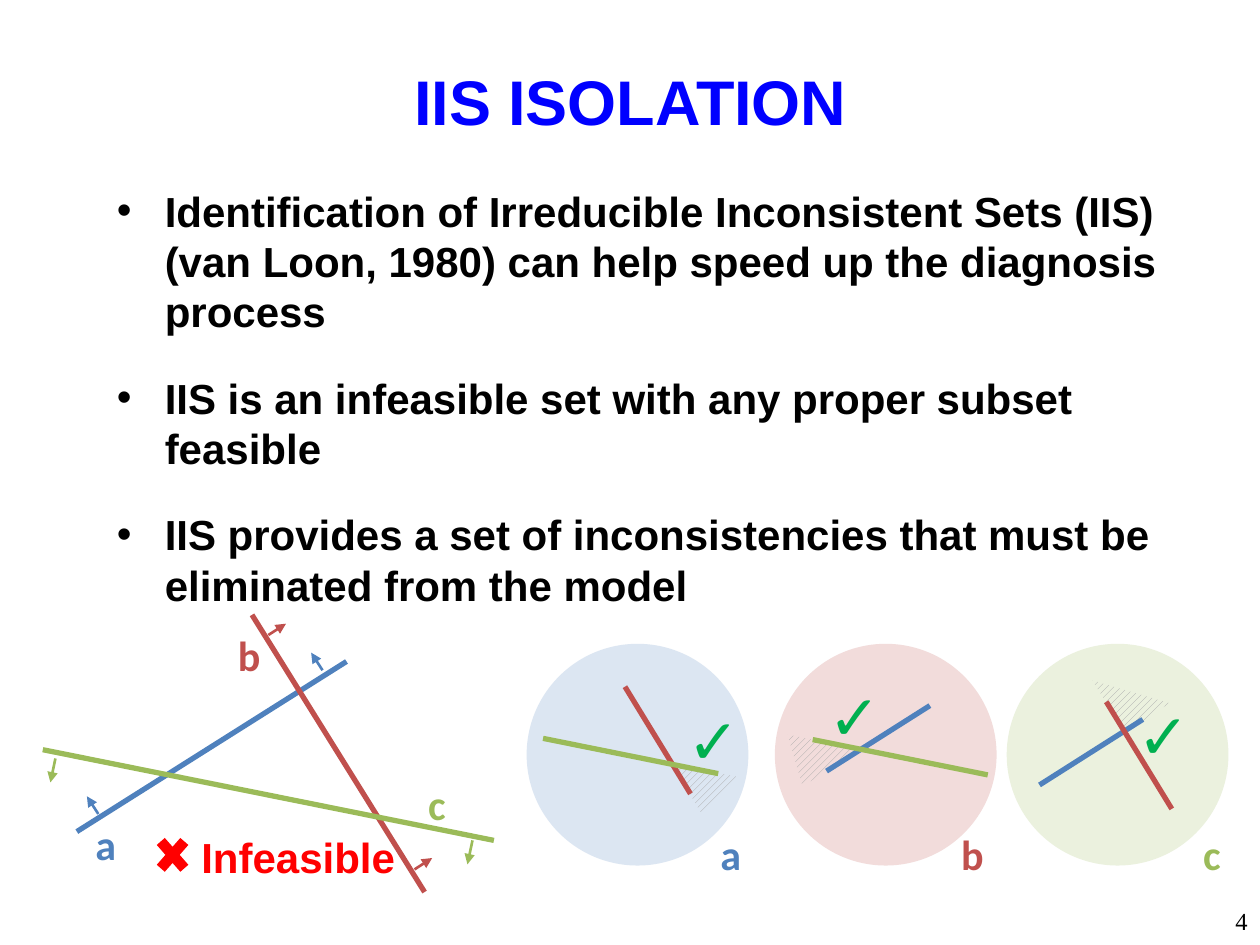
from dataclasses import dataclass
from lxml.etree import SubElement
from pptx import Presentation
from pptx.dml.color import RGBColor
from pptx.enum.dml import MSO_PATTERN
from pptx.enum.shapes import MSO_CONNECTOR, MSO_SHAPE as SHP
from pptx.enum.text import MSO_ANCHOR as ANC, PP_ALIGN as AL
from pptx.oxml.ns import qn
from pptx.util import Pt

PX = 9144


@dataclass(frozen=True)
class Theme:
    """Colours, fonts and sizes of the slide."""
    title = {"size": 36, "name": "Arial", "color": "0000FF", "bold": True}
    body = {"size": 24, "name": "Arial", "color": "000000", "bold": True}
    verdict = {"size": 24, "name": "Arial", "color": "FF0000", "bold": True}
    check = {"size": 36, "name": "Arial", "color": "00B050"}
    number = {"size": 14, "name": "Times New Roman", "color": "000000"}
    label = {"size": 24, "name": "Calibri", "bold": True}
    lines = {"a": "4F81BD", "b": "C0504D", "c": "9BBB59"}
    tints = {"a": "DCE6F2", "b": "F2DCDB", "c": "EBF1DE"}
    hatch = "A6A6A6"
    thick, thin = 3, 1.5


T = Theme()
BULLETS = [
    "Identification of Irreducible Inconsistent Sets (IIS) (van Loon, 1980) can help speed up the diagnosis process",
    "IIS is an infeasible set with any proper subset feasible",
    "IIS provides a set of inconsistencies that must be eliminated from the model",
]
CONSTRAINTS = {
    "a": {"ends": ((27, 172), (241, 37)), "feet": ((222, 44), (44, 158)),
          "side": (-9, -14), "label": (32, 157)},
    "b": {"ends": ((166, 0), (303, 220)), "feet": ((179, 16), (295, 202)),
          "side": (14, -9), "label": (145, 7)},
    "c": {"ends": ((0, 107), (358, 179)), "feet": ((10, 114), (341, 179)),
          "side": (-4, 19), "label": (296, 125)},
}
SHORT = {"a": (82, -52), "b": (52, 85), "c": (139, 28)}
SUBSETS = {
    "a": {"x": 418, "region": ((115, 95), (139, 135), (170, 106)),
          "starts": {"b": (78, 34), "c": (13, 75)}, "check": (118, 41), "label": (144, 142)},
    "b": {"x": 615, "region": ((69, 84), (10, 72), (22, 113)),
          "starts": {"a": (41, 101), "c": (30, 76)}, "check": (33, 22), "label": (138, 142)},
    "c": {"x": 799, "region": ((94, 71), (129, 47), (68, 29)),
          "starts": {"a": (26, 112), "b": (79, 46)}, "check": (94, 37), "label": (146, 142)},
}


def rgb(color):
    """Turn a hex string into a colour."""
    return RGBColor.from_string(color)


def emu(*lengths):
    """Turn px into EMU."""
    return [v * PX for v in lengths]


def shift(origin, offset):
    """Add an offset to a point."""
    return origin[0] + offset[0], origin[1] + offset[1]


def add_text(shapes, box, paragraphs, style, wrap=True, anchor=ANC.TOP, **para):
    """Add a text box with one style and return its paragraphs."""
    tf = shapes.add_textbox(*emu(*box)).text_frame
    tf.word_wrap, tf.vertical_anchor = wrap, anchor
    for i, text in enumerate(paragraphs):
        p = tf.add_paragraph() if i else tf.paragraphs[0]
        for key, value in para.items():
            setattr(p, key, value)
        r = p.add_run()
        r.text = text
        for key, value in style.items():
            if key == "color":
                r.font.color.rgb = rgb(value)
            else:
                setattr(r.font, key, Pt(value) if key == "size" else value)
    return tf.paragraphs


def add_line(shapes, start, vector, color, width, arrow=False):
    """Add a line along a vector, with an arrowhead if asked."""
    ln = shapes.add_connector(MSO_CONNECTOR.STRAIGHT, *emu(*start, *shift(start, vector)))
    ln.line.color.rgb, ln.line.width = rgb(color), Pt(width)
    if arrow:
        SubElement(ln.line._get_or_add_ln(), qn("a:tailEnd"), type="triangle")
    SubElement(ln._element.spPr, qn("a:effectLst"))


def add_solid(shapes, preset, box, color):
    """Add a plain filled preset shape."""
    sp = shapes.add_shape(preset, *emu(*box))
    sp.shadow.inherit = False
    sp.fill.solid()
    sp.fill.fore_color.rgb = rgb(color)
    sp.line.fill.background()


def add_label(shapes, at, name):
    """Add the letter of a constraint in its colour."""
    add_text(shapes, (*at, 37, 50), [name], {**T.label, "color": T.lines[name]}, wrap=False)


def add_bullets(shapes, box):
    """Add the bullet list."""
    paras = add_text(shapes, box, BULLETS, T.body, line_spacing=1.0, space_before=Pt(20.5))
    paras[0].space_before = Pt(0)
    for p in paras:
        pPr = p._p.get_or_add_pPr()
        pPr.set("marL", str(38 * PX))
        pPr.set("indent", str(-38 * PX))
        SubElement(pPr, qn("a:buFont"), typeface="Arial")
        SubElement(pPr, qn("a:buChar"), char="•")


def add_verdict(shapes, origin):
    """Add the cross and the word beside it."""
    add_solid(shapes, SHP.MATH_MULTIPLY, (*origin, 36, 41), T.verdict["color"])
    add_text(shapes, (*shift(origin, (31, -3)), 176, 50), ["Infeasible"], T.verdict)


def add_constraint(shapes, origin, name):
    """Add one constraint line with its side arrows and letter."""
    spec, color = CONSTRAINTS[name], T.lines[name]
    (x1, y1), (x2, y2) = spec["ends"]
    add_line(shapes, shift(origin, (x1, y1)), (x2 - x1, y2 - y1), color, T.thick)
    for foot in spec["feet"]:
        add_line(shapes, shift(origin, foot), spec["side"], color, T.thin, arrow=True)
    add_label(shapes, shift(origin, spec["label"]), name)


def add_subset(shapes, origin, name):
    """Add the feasible subset left when one constraint is dropped."""
    subset = SUBSETS[name]
    add_solid(shapes, SHP.OVAL, (*origin, 176, 176), T.tints[name])
    first, *rest = [shift(origin, pt) for pt in subset["region"]]
    fb = shapes.build_freeform(*first, scale=PX)
    fb.add_line_segments(rest, close=True)
    sp = fb.convert_to_shape()
    sp.shadow.inherit = False
    sp.fill.patterned()
    sp.fill.pattern = MSO_PATTERN.WIDE_UPWARD_DIAGONAL
    sp.fill.fore_color.rgb, sp.fill.back_color.rgb = rgb(T.hatch), rgb(T.tints[name])
    sp.line.fill.background()
    for other, start in subset["starts"].items():
        add_line(shapes, shift(origin, start), SHORT[other], T.lines[other], T.thick)
    add_text(shapes, (*shift(origin, subset["check"]), 58, 58), ["✓"], T.check, wrap=False)
    add_label(shapes, shift(origin, subset["label"]), name)


def main():
    """Build the slide and save it."""
    prs = Presentation()
    prs.slide_width, prs.slide_height = emu(1000, 750)
    s = prs.slides.add_slide(prs.slide_layouts[6])
    add_text(s.shapes, (67, 17, 867, 125), ["IIS ISOLATION"], T.title,
             anchor=ANC.MIDDLE, alignment=AL.CENTER)
    add_text(s.shapes, (900, 717, 100, 33), ["4"], T.number,
             alignment=AL.RIGHT, line_spacing=0.9)
    add_bullets(s.shapes, (83, 142, 900, 492))
    add_verdict(s.shapes, (119, 658))
    for name in CONSTRAINTS:
        add_constraint(s.shapes.add_group_shape().shapes, (34, 488), name)
    for name, subset in SUBSETS.items():
        add_subset(s.shapes.add_group_shape().shapes, (subset["x"], 511), name)
    prs.save("out.pptx")


if __name__ == "__main__":
    main()
